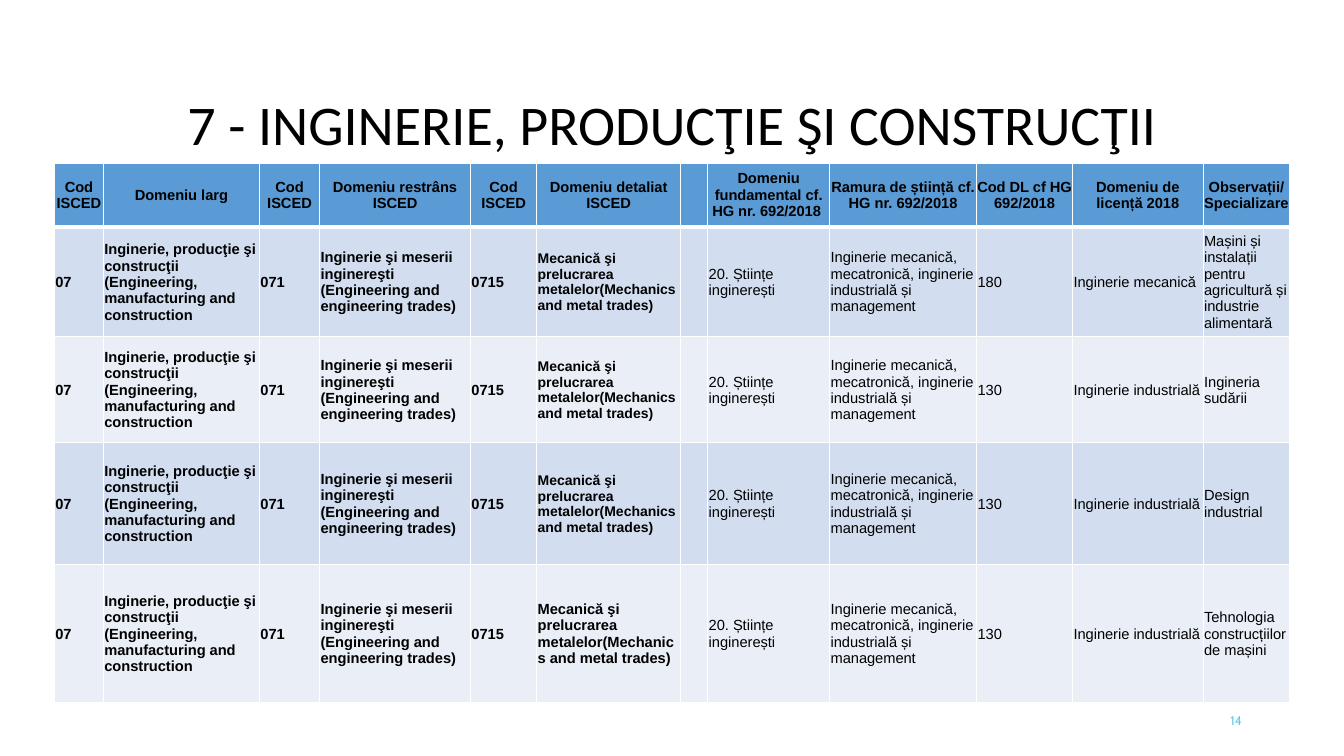
import pptx
import pptx.util
import pptx.dml.color
import pptx.enum.text
import pptx.oxml
import pptx.oxml.ns

Pt = pptx.util.Pt
ALIGN = pptx.enum.text.PP_ALIGN
MIDDLE = pptx.enum.text.MSO_ANCHOR.MIDDLE

COLUMN_WIDTHS = [35, 111.5, 43, 107.8, 47.3, 102.9, 19.3, 87.1, 105, 68.5, 93.3, 61.9]
ROW_HEIGHTS = [45.4, 78.5, 75.6, 87.1, 98.6]
BAND_FILLS = ["D2DEEF", "EAEFF7"]
DETAILED_COLUMN = 5
FIRST_REGULAR_COLUMN = 7

HEADINGS = [
    "Cod ISCED", "Domeniu larg", "Cod ISCED", "Domeniu restrâns ISCED",
    "Cod ISCED", "Domeniu detaliat ISCED", "",
    "Domeniu fundamental cf. HG nr. 692/2018 ",
    "Ramura de știință cf. HG nr. 692/2018", "Cod DL cf HG 692/2018",
    "Domeniu de licență 2018", "Observații/ Specializare",
]
SHARED_FIELDS = [
    "07",
    "Inginerie, producţie şi construcţii (Engineering, manufacturing and construction",
    "071",
    "Inginerie şi meserii inginereşti (Engineering and engineering trades)",
    "0715",
    "Mecanică şi prelucrarea metalelor(Mechanics and metal trades)",
    "",
    "20. Științe inginerești",
    "Inginerie mecanică, mecatronică, inginerie industrială și management",
]
PROGRAMMES = [
    ["180", "Inginerie mecanică",
     "Mașini și instalații pentru agricultură și industrie alimentară"],
    ["130", "Inginerie industrială", "Ingineria sudării"],
    ["130", "Inginerie industrială", "Design industrial"],
    ["130", "Inginerie industrială", "Tehnologia construcțiilor de mașini"],
]


def rgb(value):
    return pptx.dml.color.RGBColor.from_string(value)


def write(frame, text, size=10.5, font="Arial", color="000000", bold=False,
          align=ALIGN.LEFT, line_spacing=None):
    frame.word_wrap = True
    paragraph = frame.paragraphs[0]
    paragraph.alignment = align
    paragraph.line_spacing = line_spacing
    if text:
        run = paragraph.add_run()
        run.text = text
        run.font.size = Pt(size)
        run.font.name = font
        run.font.bold = bold
        run.font.color.rgb = rgb(color)


def add_label(slide, box, text, **text_format):
    frame = slide.shapes.add_textbox(*map(Pt, box)).text_frame
    frame.vertical_anchor = MIDDLE
    write(frame, text, **text_format)


def set_borders(cell, **widths):
    properties = cell._tc.get_or_add_tcPr()
    for position, side in enumerate("LRTB"):
        border = pptx.oxml.parse_xml(
            f'<a:ln{side} {pptx.oxml.ns.nsdecls("a")} w="{Pt(widths.get(side, 1))}">'
            f'<a:solidFill><a:srgbClr val="FFFFFF"/></a:solidFill></a:ln{side}>')
        properties.insert(position, border)


def format_cell(cell, fill, inset):
    cell.vertical_anchor = MIDDLE
    cell.margin_left = cell.margin_right = cell.margin_top = Pt(inset)
    cell.margin_bottom = Pt(0)
    cell.fill.solid()
    cell.fill.fore_color.rgb = rgb(fill)


def add_classification(slide, box):
    records = [SHARED_FIELDS + programme for programme in PROGRAMMES]
    classification = slide.shapes.add_table(
        len(ROW_HEIGHTS), len(COLUMN_WIDTHS), *map(Pt, box)).table
    classification.first_row = False
    classification.horz_banding = False
    for column, width in zip(classification.columns, COLUMN_WIDTHS):
        column.width = Pt(width)
    for row, height in zip(classification.rows, ROW_HEIGHTS):
        row.height = Pt(height)

    for column, heading in enumerate(HEADINGS):
        cell = classification.cell(0, column)
        format_cell(cell, "5B9BD5", 0)
        set_borders(cell, B=3)
        write(cell.text_frame, heading, bold=True, align=ALIGN.CENTER)

    for row, record in enumerate(records, start=1):
        for column, field in enumerate(record):
            cell = classification.cell(row, column)
            format_cell(cell, BAND_FILLS[(row - 1) % 2], 0.7)
            set_borders(cell, T=3 if row == 1 else 1)
            compact = column == DETAILED_COLUMN and row < len(records)
            write(cell.text_frame, field, size=10 if compact else 10.5,
                  bold=column < FIRST_REGULAR_COLUMN)


def main():
    presentation = pptx.Presentation()
    presentation.slide_width = Pt(960)
    presentation.slide_height = Pt(540)
    slide = presentation.slides.add_slide(presentation.slide_layouts[6])
    add_label(slide, (678.2, 500.4, 216, 28.8), "14", size=9, font="Cabin",
              color="5FCBEF", align=ALIGN.RIGHT)
    add_label(slide, (66, 64.8, 828, 51.8), "7 - INGINERIE, PRODUCŢIE ŞI CONSTRUCŢII",
              size=40, font="Calibri", align=ALIGN.CENTER, line_spacing=0.9)
    add_classification(slide, (38.9, 116.7, sum(COLUMN_WIDTHS), sum(ROW_HEIGHTS)))
    presentation.save("out.pptx")


if __name__ == "__main__":
    main()
